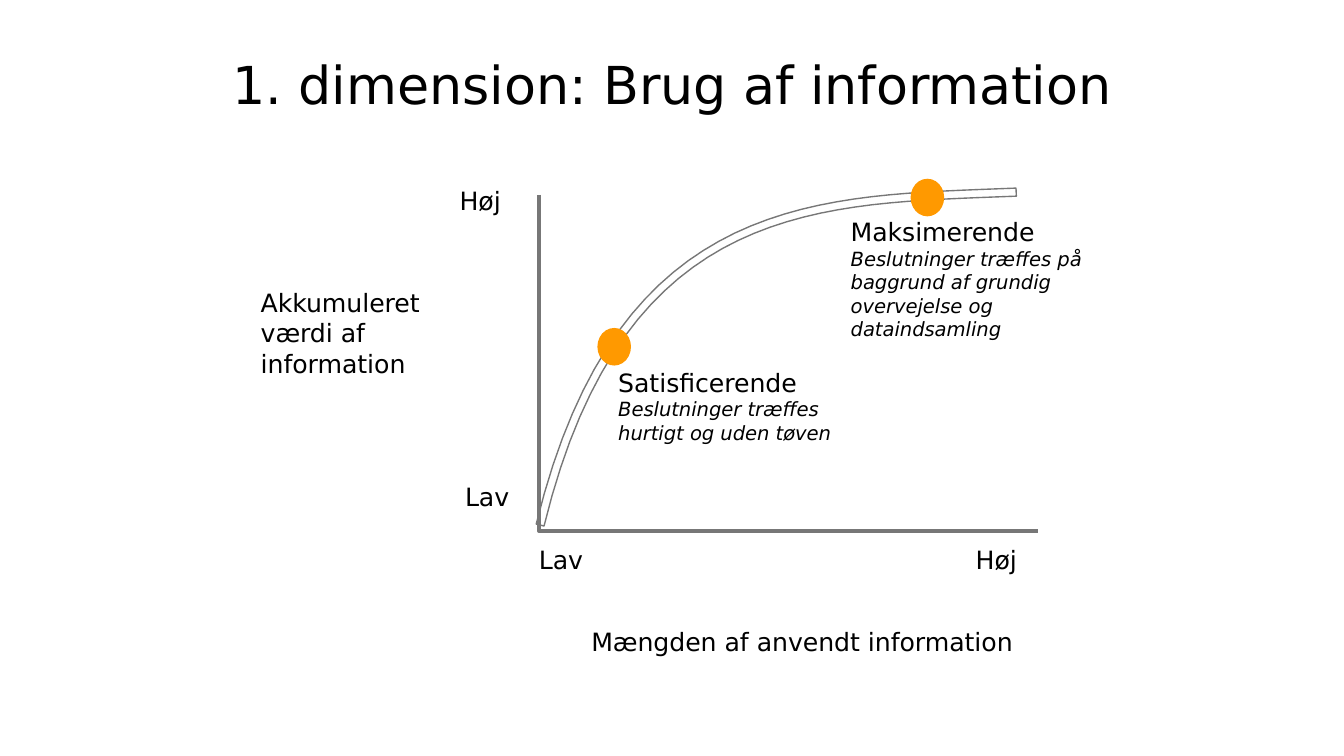
import math
from dataclasses import dataclass

import pptx
import pptx.dml.color
import pptx.enum.shapes
import pptx.enum.text
import pptx.util
from pptx.util import Inches


@dataclass(frozen=True)
class Theme:
    """Hold the colours, font and type sizes of the deck."""
    ink: str = "000000"
    paper: str = "FFFFFF"
    axis: str = "777777"
    marker: str = "FF9900"
    font: str = "DejaVu Sans"
    title: float = 28
    label: float = 13.5
    detail: float = 10.5


THEME = Theme()


def color(code):
    """Return an RGB colour from its hexadecimal code."""
    return pptx.dml.color.RGBColor.from_string(code)


def add_text(page, lines, left, top, width, height, *, size=THEME.label,
             detail_size=None, align="LEFT", wrap=False, inset=(0.07, 0.04)):
    """Place lines of text; lines after the first turn italic if detail_size is given."""
    box = page.shapes.add_textbox(Inches(left), Inches(top), Inches(width), Inches(height))
    frame = box.text_frame
    frame.word_wrap = wrap
    frame.auto_size = pptx.enum.text.MSO_AUTO_SIZE.SHAPE_TO_FIT_TEXT
    frame.margin_left = frame.margin_right = Inches(inset[0])
    frame.margin_top = frame.margin_bottom = Inches(inset[1])
    for index, line in enumerate(lines):
        para = frame.add_paragraph() if index else frame.paragraphs[0]
        para.alignment = pptx.enum.text.PP_ALIGN[align]
        span = para.add_run()
        span.text = line
        is_detail = bool(index and detail_size)
        span.font.size = pptx.util.Pt(detail_size if is_detail else size)
        span.font.italic = is_detail
        span.font.name = THEME.font
        span.font.color.rgb = color(THEME.ink)
    return box


def add_outline(page, points, *, line_width, fill=None, close=False):
    """Draw straight segments through points, optionally closed and filled."""
    first, *others = [(Inches(x), Inches(y)) for x, y in points]
    builder = page.shapes.build_freeform(*first)
    builder.add_line_segments(others, close=close)
    shape = builder.convert_to_shape()
    shape.shadow.inherit = False
    shape.line.color.rgb = color(THEME.axis)
    shape.line.width = pptx.util.Pt(line_width)
    if fill:
        shape.fill.solid()
        shape.fill.fore_color.rgb = color(fill)
    else:
        shape.fill.background()
    return shape


def curve_band(controls, thickness, steps=32):
    """Return the closed outline of a band lying to the right of a cubic curve."""
    start, first, second, end = controls
    outer, inner = [], []
    for step in range(steps + 1):
        t = step / steps
        u = 1 - t
        x, y = (u**3 * a + 3 * u * u * t * b + 3 * u * t * t * c + t**3 * d
                for a, b, c, d in zip(start, first, second, end))
        dx, dy = (u * u * (b - a) + 2 * u * t * (c - b) + t * t * (d - c)
                  for a, b, c, d in zip(start, first, second, end))
        length = math.hypot(dx, dy)
        outer.append((x, y))
        inner.append((x - thickness * dy / length, y + thickness * dx / length))
    return outer + inner[::-1]


def add_marker(page, center_x, center_y):
    """Place an orange marker on the curve."""
    width, height = 0.25, 0.28
    marker = page.shapes.add_shape(
        pptx.enum.shapes.MSO_SHAPE.OVAL, Inches(center_x - width / 2),
        Inches(center_y - height / 2), Inches(width), Inches(height))
    marker.shadow.inherit = False
    marker.fill.solid()
    marker.fill.fore_color.rgb = color(THEME.marker)
    marker.line.fill.background()


def add_title(page, left, top, width, height):
    """Place the centred slide title."""
    add_text(page, ["1. dimension: Brug af information"], left, top, width, height,
             size=THEME.title, align="CENTER", wrap=True, inset=(0, 0))


def add_plot(page, left, top, width, height):
    """Draw the value curve, its axes and the two decision styles."""
    right, bottom = left + width, top + height
    controls = [(left - 0.02, bottom - 0.05), (left + 0.59, top - 0.05),
                (left + 2.12, top + 0.01), (right - 0.16, top - 0.05)]
    add_outline(page, curve_band(controls, 0.06), line_width=0.75,
                fill=THEME.paper, close=True)
    add_outline(page, [(left, top), (left, bottom), (right, bottom)], line_width=2)

    add_marker(page, left + 0.56, top + 1.13)
    add_text(page, ["Satisficerende", "Beslutninger træffes", "hurtigt og uden tøven"],
             left + 0.52, top + 1.24, 1.77, 0.66, detail_size=THEME.detail)
    add_marker(page, left + 2.89, top + 0.02)
    add_text(page, ["Maksimerende", "Beslutninger træffes på baggrund af grundig "
                    "overvejelse og dataindsamling"],
             left + 2.25, top + 0.12, 1.87, 1.01, detail_size=THEME.detail, wrap=True)


def add_axis_labels(page, left, top, width, height):
    """Name both axes and mark their low and high ends."""
    right, bottom = left + width, top + height
    add_text(page, ["Akkumuleret", "værdi af", "information"],
             left - 2.14, top + 0.65, 1.36, 0.76)
    add_text(page, ["Mængden af anvendt information"], left + 0.32, bottom + 0.67, 3.32, 0.3)
    for word, x, y in [("Høj", right - 0.53, bottom + 0.06), ("Høj", left - 0.66, top - 0.11),
                       ("Lav", left - 0.07, bottom + 0.06), ("Lav", left - 0.62, bottom - 0.41)]:
        add_text(page, [word], x, y, 0.5, 0.3)


def main():
    """Build and save the deck."""
    deck = pptx.Presentation()
    deck.slide_width = Inches(10)
    deck.slide_height = deck.slide_width * 9 // 16
    page = deck.slides.add_slide(deck.slide_layouts[6])
    plot_area = (4.01, 1.45, 3.71, 2.5)
    add_title(page, 0.43, 0.39, 9.14, 0.74)
    add_plot(page, *plot_area)
    add_axis_labels(page, *plot_area)
    deck.save("out.pptx")


if __name__ == "__main__":
    main()
